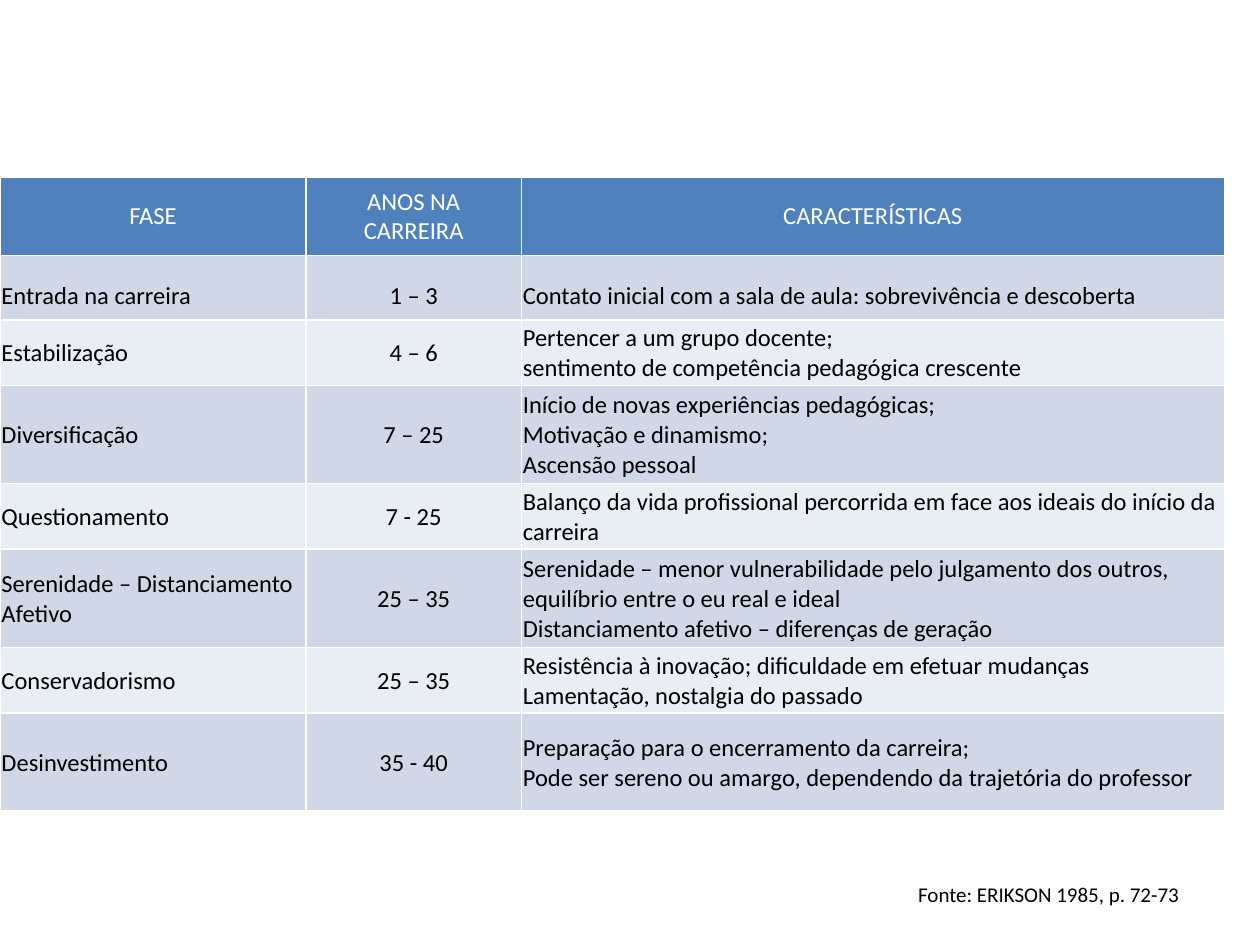
from pptx import Presentation
from pptx.dml.color import RGBColor
from pptx.enum.text import MSO_ANCHOR, MSO_AUTO_SIZE, PP_ALIGN
from pptx.util import Cm, Pt

COLUMN_WIDTHS = [6.17, 4.34, 14.17]
ROW_HEIGHTS = [1.57, 1.3, 1.32, 1.98, 1.32, 1.98, 1.32, 1.98]
CAREER_PHASES = [
    ("FASE", "ANOS NA CARREIRA", "CARACTERÍSTICAS"),
    ("Entrada na carreira", "1 – 3",
     "Contato inicial com a sala de aula: sobrevivência e descoberta"),
    ("Estabilização", "4 – 6",
     "Pertencer a um grupo docente;\n"
     "sentimento de competência pedagógica crescente"),
    ("Diversificação", "7 – 25",
     "Início de novas experiências pedagógicas;\n"
     "Motivação e dinamismo;\n"
     "Ascensão pessoal"),
    ("Questionamento", "7 - 25",
     "Balanço da vida profissional percorrida em face aos ideais do início da carreira"),
    ("Serenidade – Distanciamento Afetivo", "25 – 35",
     "Serenidade – menor vulnerabilidade pelo julgamento dos outros, "
     "equilíbrio entre o eu real e ideal\n"
     "Distanciamento afetivo – diferenças de geração"),
    ("Conservadorismo", "25 – 35",
     "Resistência à inovação; dificuldade em efetuar mudanças\n"
     "Lamentação, nostalgia do passado"),
    ("Desinvestimento", "35 - 40",
     "Preparação para o encerramento da carreira;\n"
     "Pode ser sereno ou amargo, dependendo da trajetória do professor"),
]


def color(hex_string):
    return RGBColor.from_string(hex_string)


class SlideBuilder:
    font_name = "Calibri"
    text_color = "000000"
    header_text = "FFFFFF"
    header_fill = "4F81BD"
    band_fills = ["E9EDF4", "D0D8E8"]

    def __init__(self, slide):
        self.slide = slide

    def style_paragraph(self, paragraph, size, text_color, alignment=PP_ALIGN.LEFT):
        paragraph.alignment = alignment
        font = paragraph.font
        font.name = self.font_name
        font.size = Pt(size)
        font.bold = False
        font.color.rgb = color(text_color)

    def fill_cell(self, cell, text, row, column):
        is_header = row == 0
        cell.text = text
        cell.vertical_anchor = MSO_ANCHOR.MIDDLE
        cell.fill.solid()
        cell.fill.fore_color.rgb = color(
            self.header_fill if is_header else self.band_fills[row % 2])
        if not is_header:
            cell.margin_left = cell.margin_right = cell.margin_top = Cm(0.03)
            cell.margin_bottom = 0
        centered = is_header or column == 1
        for paragraph in cell.text_frame.paragraphs:
            self.style_paragraph(
                paragraph, 14,
                self.header_text if is_header else self.text_color,
                PP_ALIGN.CENTER if centered else PP_ALIGN.LEFT)
            if row == 1:
                paragraph.line_spacing = 1.5

    def add_table(self, left, top, widths, heights, contents):
        table = self.slide.shapes.add_table(
            len(heights), len(widths), Cm(left), Cm(top),
            Cm(sum(widths)), Cm(sum(heights))).table
        for column, width in zip(table.columns, widths):
            column.width = Cm(width)
        for row, height in zip(table.rows, heights):
            row.height = Cm(height)
        for row, texts in enumerate(contents):
            for column, text in enumerate(texts):
                self.fill_cell(table.cell(row, column), text, row, column)

    def add_text(self, left, top, width, height, text, size):
        shape = self.slide.shapes.add_textbox(Cm(left), Cm(top), Cm(width), Cm(height))
        text_frame = shape.text_frame
        text_frame.word_wrap = False
        text_frame.auto_size = MSO_AUTO_SIZE.SHAPE_TO_FIT_TEXT
        text_frame.text = text
        self.style_paragraph(text_frame.paragraphs[0], size, self.text_color)


def main():
    presentation = Presentation()
    presentation.slide_width = Cm(25.4)
    presentation.slide_height = Cm(19.05)
    builder = SlideBuilder(presentation.slides.add_slide(presentation.slide_layouts[6]))
    builder.add_table(0, 3.58, COLUMN_WIDTHS, ROW_HEIGHTS, CAREER_PHASES)
    builder.add_text(18.26, 17.65, 6.63, 0.76, "Fonte: ERIKSON 1985, p. 72-73", 12)
    presentation.save("out.pptx")


if __name__ == "__main__":
    main()
